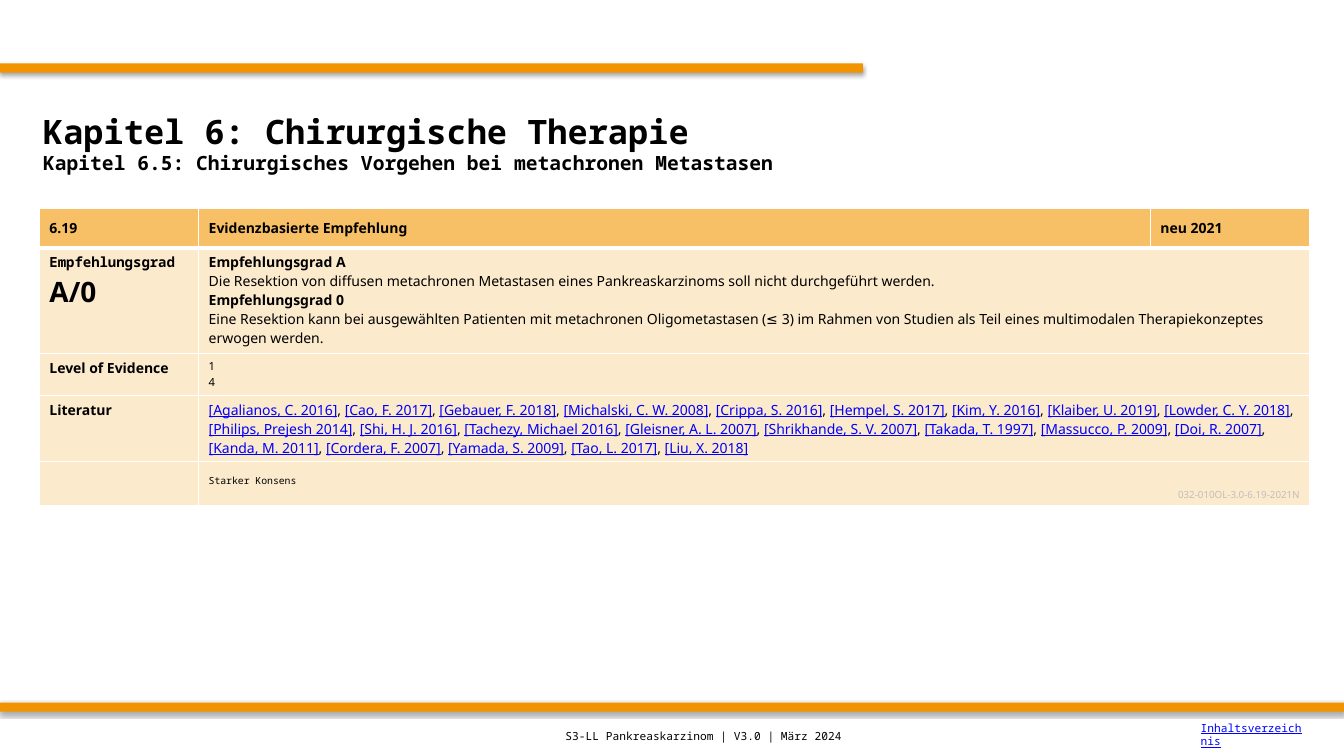
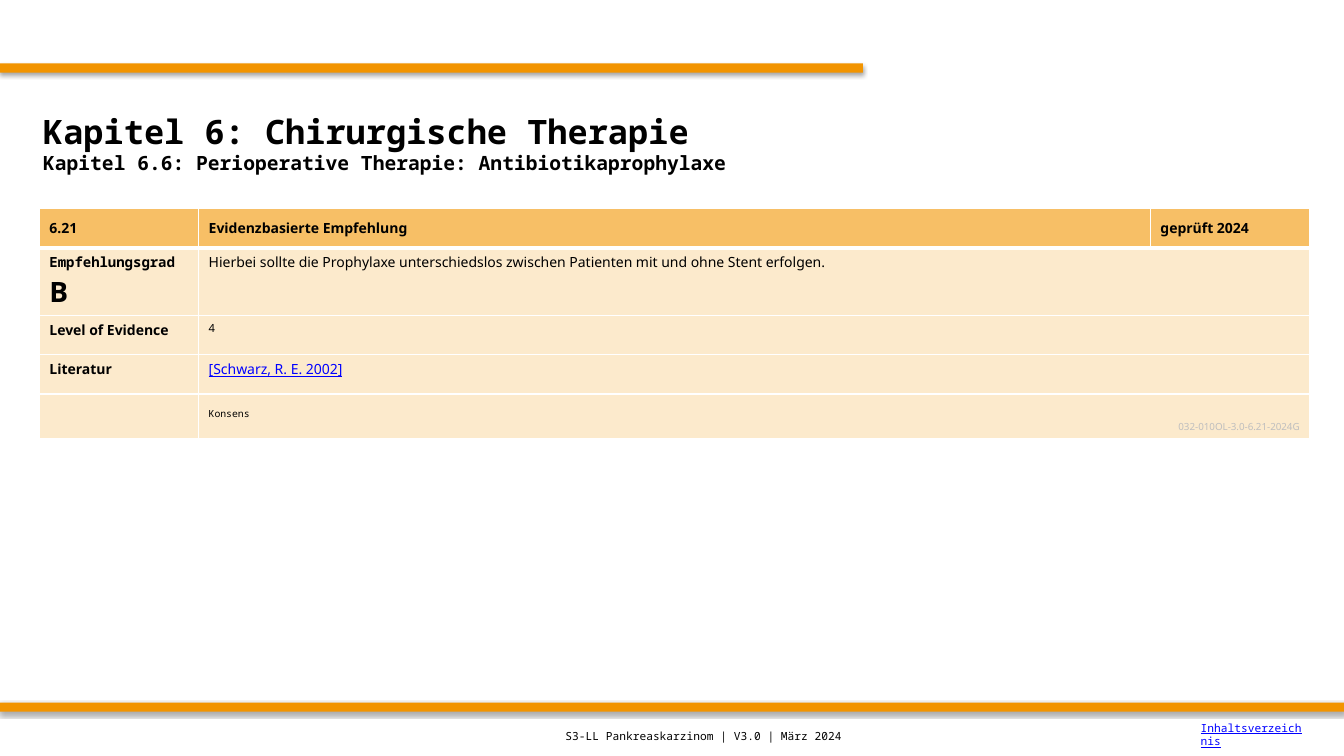
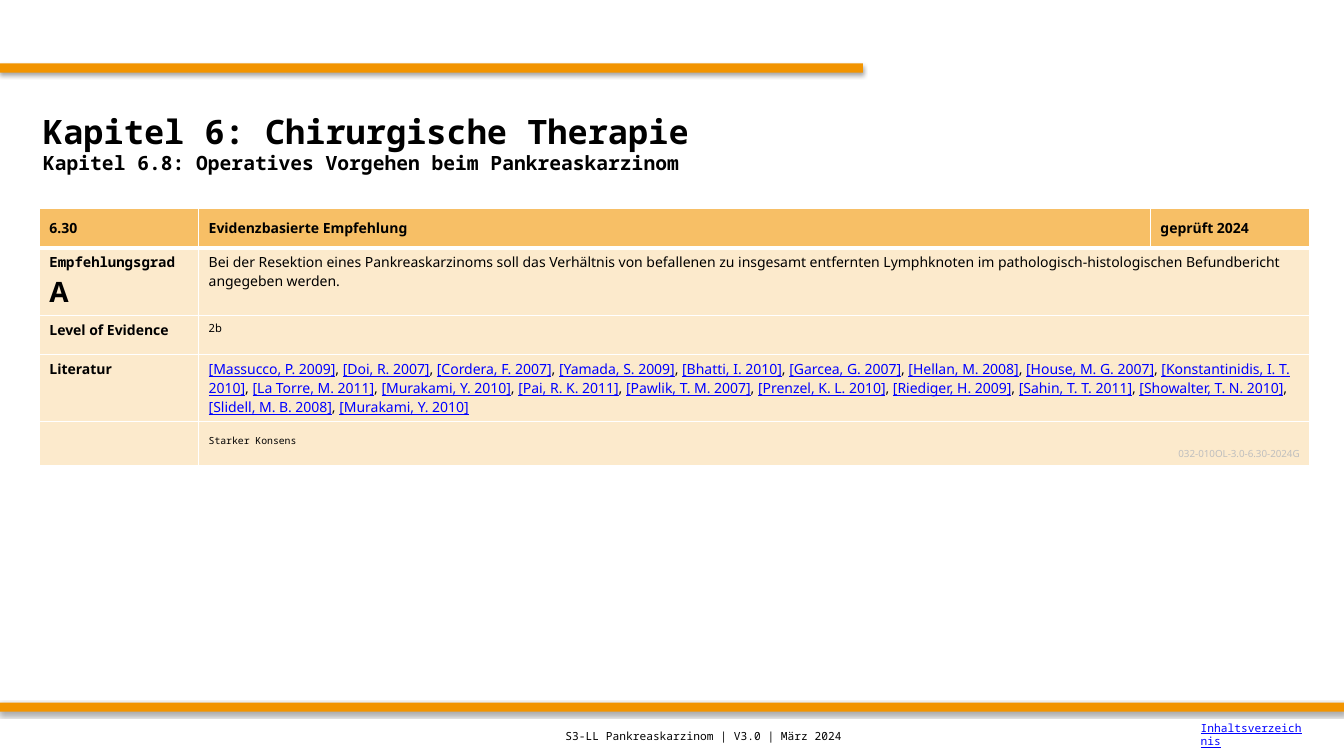
from dataclasses import dataclass

from lxml import etree
from pptx import Presentation
from pptx.dml.color import RGBColor
from pptx.enum.shapes import MSO_SHAPE
from pptx.enum.text import MSO_ANCHOR, PP_ALIGN
from pptx.oxml import parse_xml
from pptx.oxml.ns import nsdecls, qn
from pptx.util import Inches, Pt

RECT = MSO_SHAPE.RECTANGLE
TOP, MIDDLE, BOTTOM = MSO_ANCHOR.TOP, MSO_ANCHOR.MIDDLE, MSO_ANCHOR.BOTTOM
LEFT, RIGHT = PP_ALIGN.LEFT, PP_ALIGN.RIGHT

WIDTH, HEIGHT = 13.33, 7.5
SANS, MONO = "Noto Sans", "Noto Sans Mono"
COLORS = {
    "band": "F29400",
    "head": "F7BF66",
    "body": "FCEACC",
    "text": "000000",
    "link": "0000FF",
    "code": "BFBFBF",
    "rule": "FFFFFF",
}
COLS = (1.58, 9.44, 1.58)
HEAD, FOOT = 0.39, 0.44
CHAPTER = "Kapitel 6: Chirurgische Therapie"
FOOTER = "S3-LL Pankreaskarzinom | V3.0 | März 2024"


@dataclass
class Run:
    text: str
    size: float = 10
    font: str = SANS
    color: str = "text"
    bold: bool = False
    under: bool = False


@dataclass
class Para:
    runs: list[Run]
    align: PP_ALIGN = LEFT


@dataclass
class Topic:
    title: str
    number: str
    status: str
    grade: str
    advice: list[Run]
    levels: list[str]
    sources: list[str]
    vote: str
    code: str
    rows: tuple[float, float, float]  # heights of advice, levels and sources


TOPICS = [
    Topic(
        "Kapitel 6.5: Chirurgisches Vorgehen bei metachronen Metastasen",
        "6.19", "neu 2021", "A/0",
        [
            Run("Empfehlungsgrad A", bold=True),
            Run("Die Resektion von diffusen metachronen Metastasen eines "
                "Pankreaskarzinoms soll nicht durchgeführt werden."),
            Run("Empfehlungsgrad 0", bold=True),
            Run("Eine Resektion kann bei ausgewählten Patienten mit metachronen "
                "Oligometastasen (≤ 3) im Rahmen von Studien als Teil eines "
                "multimodalen Therapiekonzeptes erwogen werden."),
        ],
        ["1", "4"],
        ["Agalianos, C. 2016", "Cao, F. 2017", "Gebauer, F. 2018",
         "Michalski, C. W. 2008", "Crippa, S. 2016", "Hempel, S. 2017",
         "Kim, Y. 2016", "Klaiber, U. 2019", "Lowder, C. Y. 2018",
         "Philips, Prejesh 2014", "Shi, H. J. 2016", "Tachezy, Michael 2016",
         "Gleisner, A. L. 2007", "Shrikhande, S. V. 2007", "Takada, T. 1997",
         "Massucco, P. 2009", "Doi, R. 2007", "Kanda, M. 2011",
         "Cordera, F. 2007", "Yamada, S. 2009", "Tao, L. 2017", "Liu, X. 2018"],
        "Starker Konsens", "032-010OL-3.0-6.19-2021N",
        (1.05, 0.41, 0.66),
    ),
    Topic(
        "Kapitel 6.6: Perioperative Therapie: Antibiotikaprophylaxe",
        "6.21", "geprüft 2024", "B",
        [Run("Hierbei sollte die Prophylaxe unterschiedslos zwischen Patienten "
             "mit und ohne Stent erfolgen.")],
        ["4"],
        ["Schwarz, R. E. 2002"],
        "Konsens", "032-010OL-3.0-6.21-2024G",
        (0.67, 0.39, 0.39),
    ),
    Topic(
        "Kapitel 6.8: Operatives Vorgehen beim Pankreaskarzinom",
        "6.30", "geprüft 2024", "A",
        [Run("Bei der Resektion eines Pankreaskarzinoms soll das Verhältnis von "
             "befallenen zu insgesamt entfernten Lymphknoten im "
             "pathologisch-histologischen Befundbericht angegeben werden.")],
        ["2b"],
        ["Massucco, P. 2009", "Doi, R. 2007", "Cordera, F. 2007",
         "Yamada, S. 2009", "Bhatti, I. 2010", "Garcea, G. 2007",
         "Hellan, M. 2008", "House, M. G. 2007", "Konstantinidis, I. T. 2010",
         "La Torre, M. 2011", "Murakami, Y. 2010", "Pai, R. K. 2011",
         "Pawlik, T. M. 2007", "Prenzel, K. L. 2010", "Riediger, H. 2009",
         "Sahin, T. T. 2011", "Showalter, T. N. 2010", "Slidell, M. B. 2008",
         "Murakami, Y. 2010"],
        "Starker Konsens", "032-010OL-3.0-6.30-2024G",
        (0.67, 0.39, 0.66),
    ),
]


def paint(fill, name: str) -> None:
    fill.solid()
    fill.fore_color.rgb = RGBColor.from_string(COLORS[name])


def write(frame, paras: list[Para]) -> None:
    for i, para in enumerate(paras):
        line = frame.add_paragraph() if i else frame.paragraphs[0]
        line.alignment = para.align
        for item in para.runs:
            run = line.add_run()
            run.text = item.text
            font = run.font
            font.size, font.name = Pt(item.size), item.font
            font.bold, font.underline = item.bold, item.under
            font.color.rgb = RGBColor.from_string(COLORS[item.color])


def add_text(slide, left: float, top: float, width: float, height: float,
             paras: list[Para]) -> None:
    box = slide.shapes.add_textbox(*map(Inches, (left, top, width, height)))
    frame = box.text_frame
    frame.word_wrap = True
    frame.vertical_anchor = MIDDLE
    write(frame, paras)


def add_band(slide, top: float, width: float) -> None:
    band = slide.shapes.add_shape(RECT, 0, Inches(top), Inches(width), Inches(0.09))
    paint(band.fill, "band")
    band.line.fill.background()
    band.shadow.inherit = False
    effect = band.element.spPr.find(qn("a:effectLst"))
    effect.append(parse_xml(
        f'<a:outerShdw {nsdecls("a")} blurRad="{Pt(3.1)}" dist="{Pt(1.8)}" '
        'dir="5400000" rotWithShape="0"><a:srgbClr val="000000">'
        '<a:alpha val="35000"/></a:srgbClr></a:outerShdw>'))


def add_rules(cell, base: float, roof: float) -> None:
    """Draw the cell's borders; base and roof are the bottom and top widths."""
    props = cell._tc.get_or_add_tcPr()
    for side, width in (("L", 1), ("R", 1), ("T", roof), ("B", base)):
        rule = etree.SubElement(props, qn(f"a:ln{side}"), w=str(Pt(width)))
        fill = etree.SubElement(rule, qn("a:solidFill"))
        etree.SubElement(fill, qn("a:srgbClr"), val=COLORS["rule"])


def cite(names: list[str]) -> list[Run]:
    runs = []
    for name in names:
        if runs:
            runs.append(Run(", "))
        runs.append(Run(f"[{name}]", color="link", under=True))
    return runs


def label(text: str, font: str = SANS, size: float = 10) -> Para:
    return Para([Run(text, size, font, bold=True)])


def add_grid(slide, topic: Topic) -> None:
    sizes = (HEAD, *topic.rows, FOOT)
    grid = slide.shapes.add_table(
        len(sizes), len(COLS), Inches(0.39), Inches(2.07),
        Inches(sum(COLS)), Inches(sum(sizes))).table
    grid.first_row = grid.horz_banding = False
    for col, width in zip(grid.columns, COLS):
        col.width = Inches(width)
    for row, height in zip(grid.rows, sizes):
        row.height = Inches(height)

    # Content by row; body rows span the last two columns
    rows = [
        [[label(topic.number)], [label("Evidenzbasierte Empfehlung")],
         [label(topic.status)]],
        [[label("Empfehlungsgrad", MONO), label(topic.grade, size=20)],
         [Para([run]) for run in topic.advice]],
        [[label("Level of Evidence")],
         [Para([Run(level, 8)]) for level in topic.levels]],
        [[label("Literatur")], [Para(cite(topic.sources))]],
        [[], [Para([Run(topic.vote, 7, MONO)]),
              Para([Run(topic.code, 7, color="code")], RIGHT)]],
    ]
    last = len(rows) - 1
    for r, row in enumerate(rows):
        for c in range(len(COLS)):
            cell = grid.cell(r, c)
            add_rules(cell, 1 if r else 3, 3 if r == 1 else 1)
            paint(cell.fill, "body" if r else "head")
            cell.vertical_anchor = BOTTOM if r == last else TOP if r else MIDDLE
        if r:
            grid.cell(r, 1).merge(grid.cell(r, 2))
        for c, paras in enumerate(row):
            write(grid.cell(r, c).text_frame, paras)


def add_frame(slide, title: str) -> None:
    # Bands, title and footer
    add_band(slide, 0.63, 8.56)
    add_band(slide, 6.97, WIDTH)
    add_text(slide, 0.33, 0.83, 12.67, 1.17,
             [label(CHAPTER, MONO, 24), label(title, MONO, 14)])
    add_text(slide, 5.51, 7.11, 5.51, 0.39, [Para([Run(FOOTER, 8, MONO)])])
    add_text(slide, 11.81, 7.09, 1.22, 0.39, [
        Para([Run("Inhaltsverzeichnis", 8, MONO, "link", under=True)])])


def main() -> None:
    deck = Presentation()
    deck.slide_width, deck.slide_height = Inches(WIDTH), Inches(HEIGHT)
    for topic in TOPICS:
        slide = deck.slides.add_slide(deck.slide_layouts[6])
        add_frame(slide, topic.title)
        add_grid(slide, topic)
    deck.save("out.pptx")


if __name__ == "__main__":
    main()
